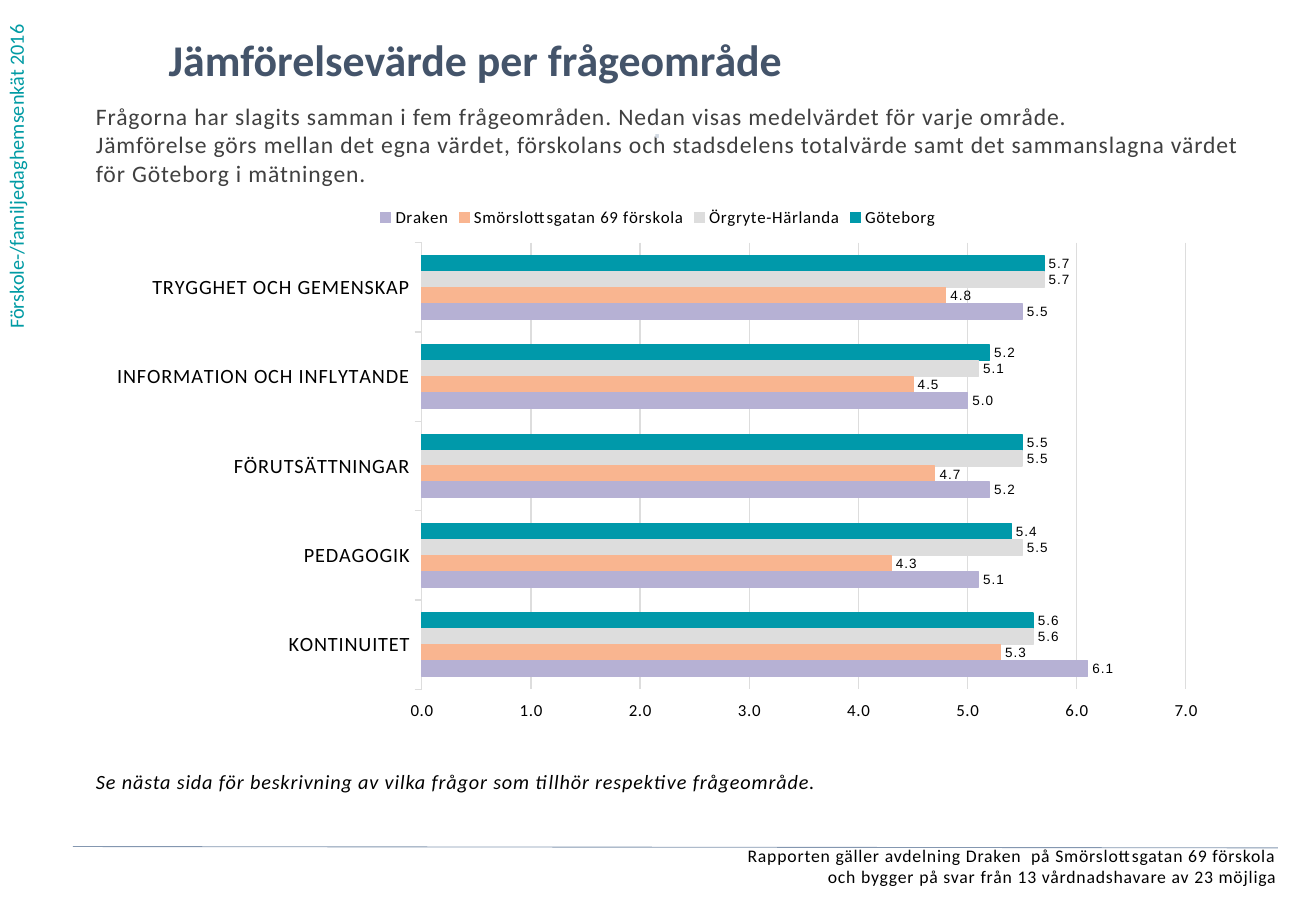
from lxml import etree
from pptx import Presentation
from pptx.chart.data import CategoryChartData
from pptx.dml.color import RGBColor
from pptx.enum import chart as ch, shapes, text
from pptx.oxml import ns, parse_xml
from pptx.util import Pt

TEAL = RGBColor(0x00, 0x99, 0xAA)
GREY = RGBColor(0xDD, 0xDD, 0xDD)
PEACH = RGBColor(0xF9, 0xB5, 0x90)
LILAC = RGBColor(0xB6, 0xB1, 0xD4)
SIDE = RGBColor(0x00, 0x9B, 0xA4)
NAVY = RGBColor(0x44, 0x54, 0x6A)
DARK = RGBColor(0x40, 0x40, 0x40)
BLACK = RGBColor(0, 0, 0)
PALE = RGBColor(0xD2, 0xD9, 0xE2)
RULE = RGBColor(0x84, 0x97, 0xB0)
NUM = "0.0;0.0"

prs = Presentation()
prs.slide_width, prs.slide_height = Pt(780), Pt(540)
slide = prs.slides.add_slide(prs.slide_layouts[5])


def style(font, size, color, **more):
    font.color.rgb = color
    values = {"name": "Calibri", "size": Pt(size), **more}
    for key, val in values.items():
        setattr(font, key, val)


def write(box, place, words, size, color, align="LEFT", space=0, inset=0, **more):
    box.left, box.top, box.width, box.height = map(Pt, place)
    frame = box.text_frame
    frame.word_wrap = True
    frame.auto_size = text.MSO_AUTO_SIZE.NONE
    frame.vertical_anchor = text.MSO_ANCHOR.TOP
    for side, pad in zip(("left", "top", "right", "bottom"), (2, 1, 2, 1)):
        setattr(frame, "margin_" + side, Pt(inset * pad))
    para = frame.paragraphs[0]
    para.text = words
    para.alignment = text.PP_ALIGN[align]
    for run in para.runs:
        style(run.font, size, color, **more)
        if space:
            run.font._element.set("spc", str(space))


# Title
write(slide.shapes.title, (100, 19.4, 600, 41), "Jämförelsevärde per frågeområde",
      26, NAVY, bold=True)

# Survey name up the left edge
side = slide.shapes.add_textbox(0, 0, 0, 0)
write(side, (-1.4, 0, 28.8, 202), "Förskole-/familjedaghemsenkät 2016", 12, SIDE, inset=3.6)
side.text_frame._txBody.bodyPr.set("vert", "vert270")

# Intro, dot, note and footer
notes = [
    ((56.9, 60.3, 690, 72.7),
     "Frågorna har slagits samman i fem frågeområden. Nedan visas medelvärdet för varje "
     "område.\vJämförelse görs mellan det egna värdet, förskolans och stadsdelens "
     "totalvärde samt det sammanslagna värdet för Göteborg i mätningen.", 14, DARK, {}),
    ((278.6, 73.4, 221.8, 28), "⋅", 12, PALE, {"align": "CENTER", "bold": True}),
    ((56.9, 456.1, 666, 48.6),
     "Se nästa sida för beskrivning av vilka frågor som tillhör respektive frågeområde.",
     12, BLACK, {"italic": True}),
    ((8.6, 500.5, 748.4, 31),
     "Rapporten gäller avdelning Draken  på Smörslottsgatan 69 förskola\v"
     "och bygger på svar från 13 vårdnadshavare av 23 möjliga",
     10.5, BLACK, {"align": "RIGHT"}),
]
for place, words, size, color, more in notes:
    write(slide.shapes.add_textbox(0, 0, 0, 0), place, words, size, color, space=50, **more)

# Chart data
areas = ["TRYGGHET OCH GEMENSKAP", "INFORMATION OCH INFLYTANDE", "FÖRUTSÄTTNINGAR",
         "PEDAGOGIK", "KONTINUITET"]
groups = [
    ("Göteborg", TEAL, (5.7, 5.2, 5.5, 5.4, 5.6)),
    ("Örgryte-Härlanda", GREY, (5.7, 5.1, 5.5, 5.5, 5.6)),
    ("Smörslottsgatan 69 förskola", PEACH, (4.8, 4.5, 4.7, 4.3, 5.3)),
    ("Draken", LILAC, (5.5, 5.0, 5.2, 5.1, 6.1)),
]
data = CategoryChartData(number_format="0.0")
data.categories = areas
for name, color, vals in groups:
    data.add_series(name, vals)
chart = slide.shapes.add_chart(ch.XL_CHART_TYPE.BAR_CLUSTERED, Pt(56.9), Pt(115.2),
                               Pt(666), Pt(319), data).chart
style(chart.font, 10, BLACK)
chart.has_title = False

# Legend
chart.has_legend = True
legend = chart.legend
legend.position = ch.XL_LEGEND_POSITION.TOP
legend.include_in_layout = False
style(legend.font, 10, BLACK)

# Bars
plot = chart.plots[0]
plot.gap_width, plot.overlap, plot.vary_by_categories = 162, 0, False
for bar, (name, color, vals) in zip(plot.series, groups):
    bar.format.fill.solid()
    bar.format.fill.fore_color.rgb = color
    bar.format.line.color.rgb = color
    bar.format.line.width = Pt(0.75)
    marks = bar.data_labels
    marks.show_value = True
    marks.number_format, marks.number_format_is_linked = NUM, False
    marks.position = ch.XL_LABEL_POSITION.OUTSIDE_END
    style(marks.font, 8, BLACK, name="Arial")

# Axes, with the values below the last category
cat, val = chart.category_axis, chart.value_axis
cat.reverse_order = True
val.tick_label_position = ch.XL_TICK_LABEL_POSITION.HIGH
val.minimum_scale, val.maximum_scale, val.major_unit = 0, 7, 1
val.has_major_gridlines = True
for axis, size in ((cat, 12), (val, 10)):
    axis.major_tick_mark = ch.XL_TICK_MARK.OUTSIDE
    style(axis.tick_labels.font, size, BLACK)
for line in (cat.format.line, val.major_gridlines.format.line):
    line.color.rgb = GREY
    line.width = Pt(0.75)
val.format.line.fill.background()
val.tick_labels.number_format = NUM
val.tick_labels.number_format_is_linked = False

# Letter spacing and plot area
for font in chart.element.iter(ns.qn("a:defRPr")):
    font.set("spc", "50")
area = chart.element.find(".//" + ns.qn("c:plotArea"))
for old in area.findall(ns.qn("c:layout")):
    area.remove(old)
spots = "".join(f'<c:{key} val="{num}"/>' for key, num in (
    ("layoutTarget", "inner"), ("xMode", "edge"), ("yMode", "edge"),
    ("x", 0.29), ("y", 0.09), ("w", 0.68), ("h", 0.83)))
area.insert(0, parse_xml(f'<c:layout {ns.nsdecls("c")}><c:manualLayout>{spots}'
                         '</c:manualLayout></c:layout>'))

# Footer rule
rule = slide.shapes.add_connector(shapes.MSO_CONNECTOR.STRAIGHT, Pt(43.2), Pt(501.8),
                                  Pt(757.4), Pt(502.6))
rule.line.color.rgb = RULE
rule.line.width = Pt(0.5)
etree.SubElement(rule._element.spPr, ns.qn("a:effectLst"))

prs.save("out.pptx")
